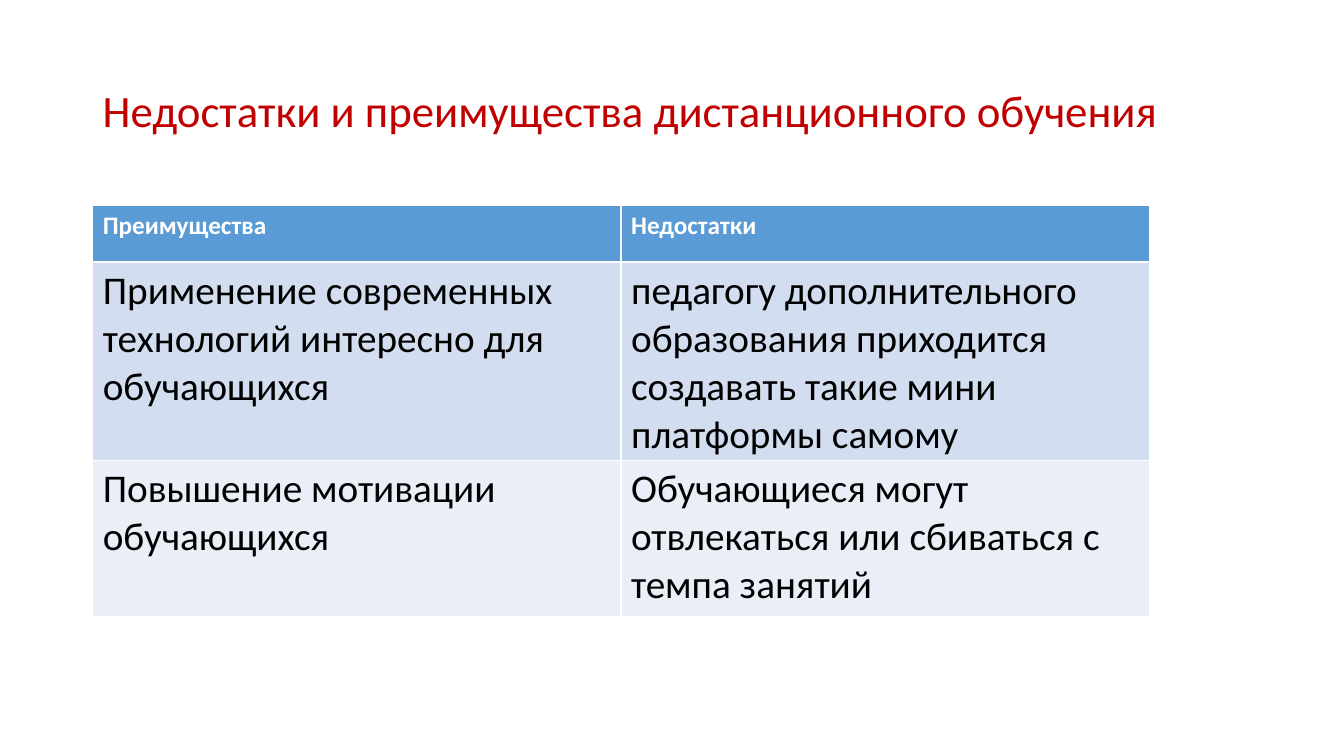
"""Builds a slide that sets the benefits of distance learning against its drawbacks."""
from pptx import Presentation
from pptx.dml.color import RGBColor as Rgb
from pptx.enum.text import MSO_ANCHOR as Anchor
from pptx.util import Inches, Pt

theme = {
    "font": "Calibri",
    "title": (32, "C00000", False),
    "head": (18, "FFFFFF", True),
    "body": (28, "000000", False),
    "fills": ["5B9BD5", "D2DEEF", "EAEFF7"],
}
rows = [
    ("Преимущества", "Недостатки"),
    ("Применение современных технологий интересно для обучающихся",
     "педагогу дополнительного образования приходится создавать такие мини платформы самому"),
    ("Повышение мотивации обучающихся",
     "Обучающиеся могут отвлекаться или сбиваться с темпа занятий"),
]
tall = [0.56, 1.96, 1.55]
left, top, wide = 0.92, 2.04, 5.24


def write(frame, text, style):
    size, color, bold = theme[style]
    frame.text = text
    font = frame.paragraphs[0].runs[0].font
    font.name, font.size, font.bold = theme["font"], Pt(size), bold
    font.color.rgb = Rgb.from_string(color)


deck = Presentation()
deck.slide_width, deck.slide_height = Inches(13.33), Inches(7.5)
slide = deck.slides.add_slide(deck.slide_layouts[6])

title = slide.shapes.add_textbox(Inches(left), Inches(0.4), Inches(11.5), Inches(1.45)).text_frame
title.word_wrap = True
title.vertical_anchor = Anchor.MIDDLE
write(title, "Недостатки и преимущества дистанционного обучения", "title")
title.paragraphs[0].line_spacing = 0.9

table = slide.shapes.add_table(
    len(rows), 2, Inches(left), Inches(top), Inches(2 * wide), Inches(sum(tall))).table
for col in table.columns:
    col.width = Inches(wide)
for r, (texts, high, fill) in enumerate(zip(rows, tall, theme["fills"])):
    table.rows[r].height = Inches(high)
    for c, text in enumerate(texts):
        cell = table.cell(r, c)
        cell.fill.solid()
        cell.fill.fore_color.rgb = Rgb.from_string(fill)
        write(cell.text_frame, text, "body" if r else "head")

deck.save("out.pptx")
